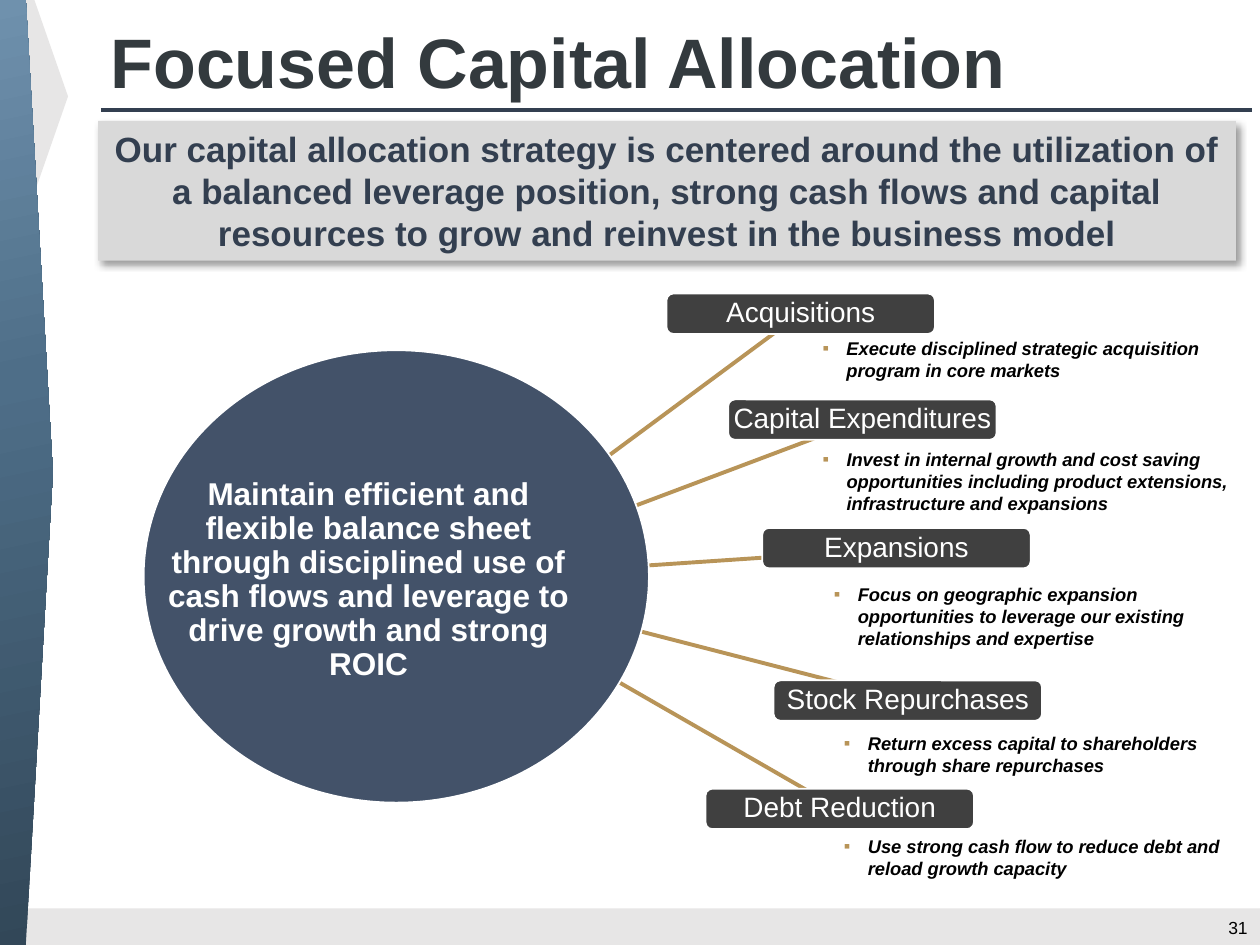
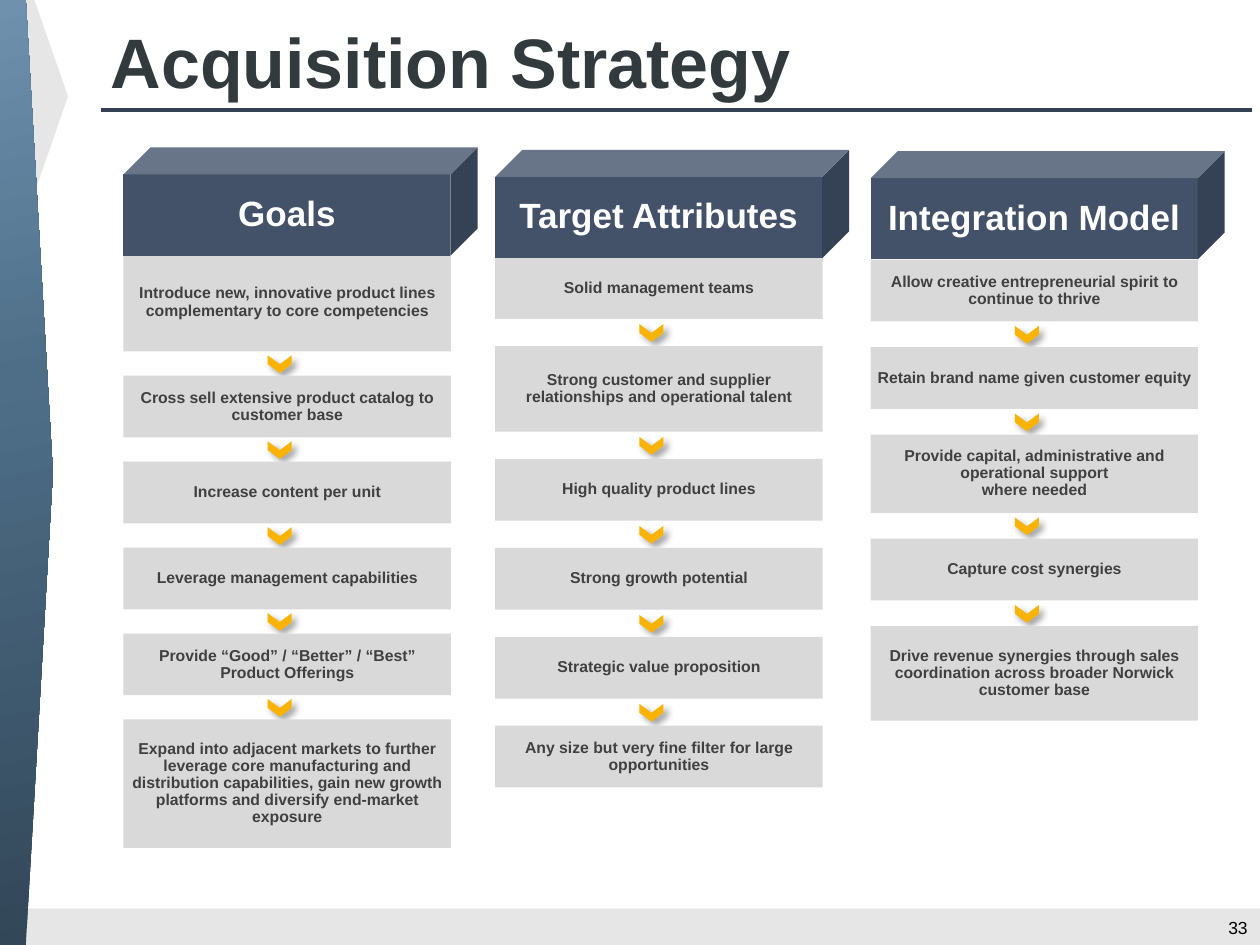
import pptx
import pptx.util
import pptx.dml.color
import pptx.enum.shapes
import pptx.enum.text
import pptx.oxml
import pptx.oxml.ns

Inches = pptx.util.Inches
Pt = pptx.util.Pt
Kind = pptx.enum.shapes.MSO_SHAPE
Align = pptx.enum.text.PP_ALIGN
Anchor = pptx.enum.text.MSO_ANCHOR
RGB = pptx.dml.color.RGBColor.from_string
NS = pptx.oxml.ns.nsdecls("a")

hues = {
    "white": "FFFFFF", "black": "000000", "pale": "E7E6E6", "gray": "D9D9D9",
    "dark": "404040", "slate": "435269", "navy": "333F50", "title": "333A3E",
    "gold": "B89458", "amber": "FAB300",
    "low": "324758", "mid": "4E6E88", "high": "6F91AD",
}


def box(slide, kind, place, fill=None, text=(), size=9, hue="dark", bold=True,
        italic=False, align=Align.CENTER, anchor=Anchor.MIDDLE, pad=(0.03, 0.03),
        space=0.9, edge=None, wrap=True, shade=False, bullet=False):
    spot = [Inches(n) for n in place]
    if kind is None:
        shape = slide.shapes.add_textbox(*spot)
    else:
        shape = slide.shapes.add_shape(kind, *spot)
        shape.shadow.inherit = False
        if fill:
            shape.fill.solid()
            shape.fill.fore_color.rgb = RGB(hues[fill])
        if edge:
            shape.line.color.rgb = RGB(hues[edge])
            shape.line.width = Pt(1)
        else:
            shape.line.fill.background()
    if shade:
        glow = shape._element.spPr.find(pptx.oxml.ns.qn("a:effectLst"))
        glow.append(pptx.oxml.parse_xml(
            f'<a:outerShdw {NS} blurRad="{Pt(4)}" dist="{Pt(3)}" dir="2700000" '
            f'algn="tl" rotWithShape="0"><a:srgbClr val="{hues["black"]}">'
            '<a:alpha val="40000"/></a:srgbClr></a:outerShdw>'))
    frame = shape.text_frame
    frame.word_wrap = wrap
    frame.vertical_anchor = anchor
    frame.margin_left = frame.margin_right = Inches(pad[0])
    frame.margin_top = frame.margin_bottom = Inches(pad[1])
    for i, words in enumerate(text):
        para = frame.add_paragraph() if i else frame.paragraphs[0]
        para.alignment = align
        para.line_spacing = space
        if bullet:
            props = para._p.get_or_add_pPr()
            props.set("marL", str(Inches(0.19)))
            props.set("indent", str(-Inches(0.19)))
            for mark in (
                f'<a:buClr {NS}><a:srgbClr val="{hues["gold"]}"/></a:buClr>',
                f'<a:buFont {NS} typeface="Arial"/>',
                f'<a:buChar {NS} char="▪"/>',
            ):
                props.append(pptx.oxml.parse_xml(mark))
        run = para.add_run()
        run.text = words
        font = run.font
        font.name = "Arial"
        font.size = Pt(size)
        font.bold = bold
        font.italic = italic
        font.color.rgb = RGB(hues[hue])
    return shape


def rule(slide, start, end, hue):
    line = slide.shapes.add_connector(
        pptx.enum.shapes.MSO_CONNECTOR.STRAIGHT,
        *[Inches(n) for n in start + end])
    line.line.color.rgb = RGB(hues[hue])
    line.line.width = Pt(2.25)
    line._element.spPr.append(pptx.oxml.parse_xml(f"<a:effectLst {NS}/>"))


deck = pptx.Presentation()
deck.slide_width = Inches(10)
deck.slide_height = Inches(7.5)

slides = []
for title, page in (("Focused Capital Allocation", "31"), ("Acquisition Strategy", "33")):
    slide = deck.slides.add_slide(deck.slide_layouts[6])
    slides.append(slide)
    box(slide, Kind.RECTANGLE, (0, 7.21, 10, 0.29), "pale")
    box(slide, Kind.PENTAGON, (0, -0.01, 0.54, 1.55), "pale")
    band = box(slide, Kind.PENTAGON, (-0.01, 0, 0.43, 7.5))
    stops = "".join(
        f'<a:gs pos="{spot * 1000}"><a:srgbClr val="{hues[name]}"/></a:gs>'
        for spot, name in ((0, "low"), (60, "mid"), (100, "high")))
    band._element.spPr.find(pptx.oxml.ns.qn("a:prstGeom")).addnext(
        pptx.oxml.parse_xml(
            f'<a:gradFill {NS} rotWithShape="1"><a:gsLst>{stops}</a:gsLst>'
            f'<a:lin ang="{258 * 60000}" scaled="0"/></a:gradFill>'))
    rule(slide, (0.8, 0.87), (9.94, 0.87), "navy")
    box(slide, None, (0.78, 0.16, 9.17, 0.71), text=[title], size=40, hue="title",
        align=Align.LEFT, anchor=Anchor.BOTTOM, pad=(0.1, 0.05))
    box(slide, None, (7.75, 7.23, 2.25, 0.27), text=[page], size=10, hue="black",
        bold=False, align=Align.RIGHT, pad=(0.1, 0.05), space=1)

focus, plan = slides

box(focus, Kind.RECTANGLE, (0.78, 0.96, 9.03, 1.11), "gray",
    ["Our capital allocation strategy is centered around the utilization of a "
     "balanced leverage position, strong cash flows and capital resources to grow "
     "and reinvest in the business model"],
    size=20, hue="navy", pad=(0.1, 0.05), space=1, shade=True)

uses = [
    ("Acquisitions", (5.29, 2.33), (4.07, 4.18), (6.15, 2.64), (6.43, 2.63, 3.4),
     "Execute disciplined strategic acquisition program in core markets"),
    ("Capital Expenditures", (5.78, 3.17), (4.07, 4.38), (6.46, 3.48), (6.43, 3.51, 3.49),
     "Invest in internal growth and cost saving opportunities including product "
     "extensions, infrastructure and expansions"),
    ("Expansions", (6.05, 4.19), (4.07, 4.56), (6.15, 4.42), (6.52, 4.58, 3.3),
     "Focus on geographic expansion opportunities to leverage our existing "
     "relationships and expertise"),
    ("Stock Repurchases", (6.14, 5.4), (4.07, 4.75), (6.67, 5.42), (6.6, 5.76, 3.3),
     "Return excess capital to shareholders through share repurchases"),
    ("Debt Reduction", (5.6, 6.26), (4.07, 4.93), (6.4, 6.27), (6.6, 6.58, 3.3),
     "Use strong cash flow to reduce debt and reload growth capacity"),
]
for name, spot, start, end, note, words in uses:
    rule(focus, start, end, "gold")
box(focus, Kind.OVAL, (1.14, 2.78, 4.01, 3.59), "slate", edge="white")
box(focus, None, (1.14, 3.72, 3.57, 1.77),
    text=["Maintain efficient and flexible balance sheet through disciplined use of "
          "cash flows and leverage to drive growth and strong ROIC"],
    size=18, hue="white", pad=(0.1, 0.05))
for name, spot, start, end, note, words in uses:
    box(focus, Kind.ROUNDED_RECTANGLE, spot + (2.13, 0.32), "dark", [name], size=16,
        hue="white", bold=False, pad=(0.01, 0.01), edge="white", wrap=False)
    box(focus, None, note + (0.47,), text=[words], size=10.5, hue="black",
        italic=True, align=Align.LEFT, anchor=Anchor.TOP, pad=(0.1, 0.05), space=1,
        bullet=True)

tracks = [
    ("Goals", 0.98, 1.17, 2.01, 6.73, [
        (0.78, ["Introduce new, innovative product lines complementary to core competencies"]),
        (0.49, ["Cross sell extensive product catalog to customer base"]),
        (0.49, ["Increase content per unit"]),
        (0.49, ["Leverage management capabilities"]),
        (0.49, ["Provide “Good” / “Better” / “Best” Product Offerings"]),
        (1.02, ["Expand into adjacent markets to further leverage core manufacturing and "
                "distribution capabilities, gain new growth platforms and diversify "
                "end-market exposure"]),
    ]),
    ("Target Attributes", 3.93, 1.19, 2.04, 6.25, [
        (0.49, ["Solid management teams"]),
        (0.68, ["Strong customer and supplier relationships and operational talent"]),
        (0.49, ["High quality product lines"]),
        (0.49, ["Strong growth potential"]),
        (0.49, ["Strategic value proposition"]),
        (0.49, ["Any size but very fine filter for large opportunities"]),
    ]),
    ("Integration Model", 6.91, 1.2, 2.06, 5.72, [
        (0.49, ["Allow creative entrepreneurial spirit to continue to thrive"]),
        (0.49, ["Retain brand name given customer equity"]),
        (0.62, ["Provide capital, administrative and operational support", "where needed"]),
        (0.49, ["Capture cost synergies"]),
        (0.75, ["Drive revenue synergies through sales coordination across broader "
                "Norwick customer base"]),
    ]),
]
for name, left, head, top, end, steps in tracks:
    gap = (end - top - sum(tall for tall, words in steps)) / (len(steps) - 1)
    for i, (tall, words) in enumerate(steps):
        if i:
            mark = box(plan, Kind.CHEVRON,
                       (left + 1.17, top - gap / 2 - 0.09, 0.14, 0.19),
                       "amber", shade=True)
            mark.rotation = 90
        box(plan, Kind.RECTANGLE, (left, top, 2.6, tall), "gray", words)
        top += tall + gap
    box(plan, Kind.CUBE, (left, head, 2.81, 0.86), "slate", [name], size=20, hue="white")

deck.save("out.pptx")
